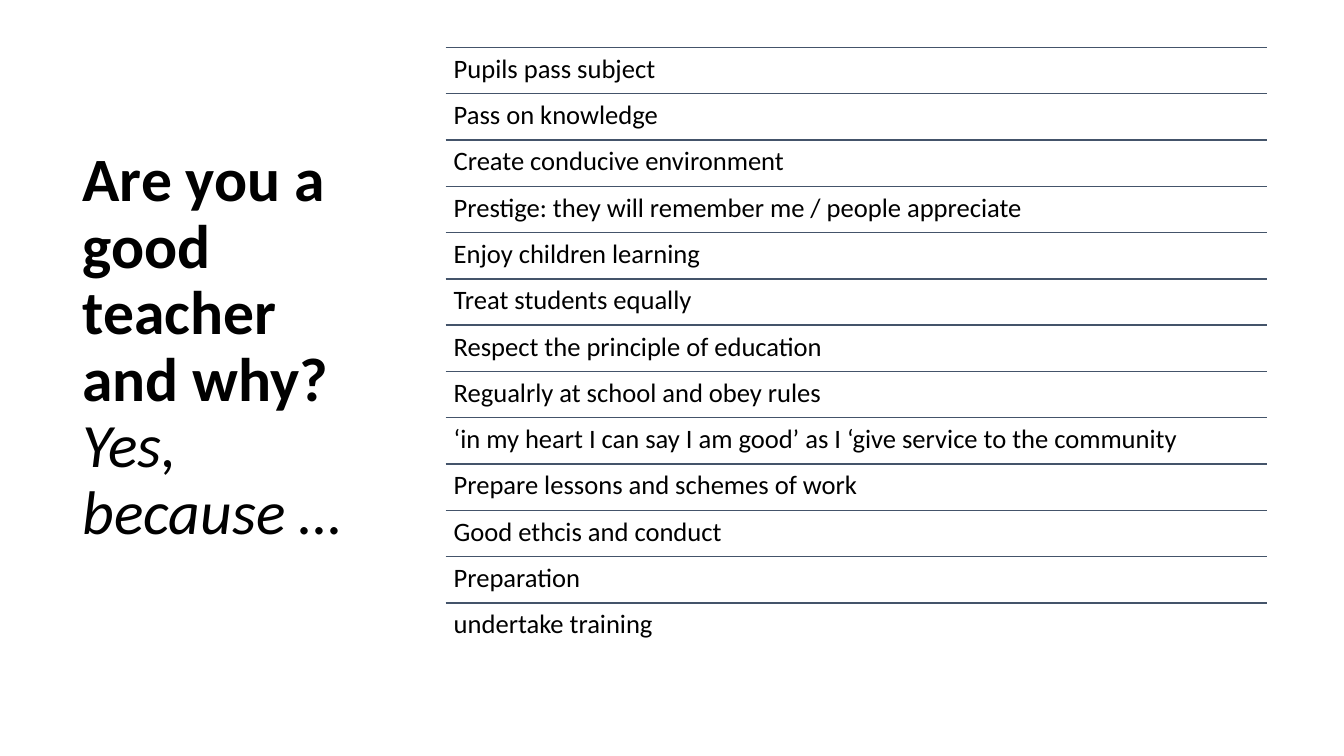
import pptx
import pptx.util
import pptx.dml.color
import pptx.enum.shapes
import pptx.enum.text
from dataclasses import dataclass
from lxml import etree

# Content
QUESTION = "Are you a good teacher and why? "
ANSWER = "Yes, because …"
REASONS = [
    "Pupils pass subject",
    "Pass on knowledge",
    "Create conducive environment",
    "Prestige: they will remember me / people appreciate",
    "Enjoy children learning",
    "Treat students equally",
    "Respect the principle of education",
    "Regualrly at school and obey rules",
    "‘in my heart I can say I am good’ as I ‘give service to the community",
    "Prepare lessons and schemes of work",
    "Good ethcis and conduct",
    "Preparation",
    "undertake training",
]


@dataclass(frozen=True)
class Theme:
    font: str = "Calibri"
    ink: str = "000000"
    rule: str = "44546A"
    question_size: int = 44
    reason_size: int = 19
    rule_width: int = 1
    line_spacing: float = 0.9


THEME = Theme()
Inches = pptx.util.Inches
Pt = pptx.util.Pt
colour = pptx.dml.color.RGBColor.from_string

# Layout: two columns sharing one top and height
WIDTH, HEIGHT = 13.33, 7.5
TOP, BODY_HEIGHT = 0.47, 5.97
QUESTION_LEFT, QUESTION_WIDTH = 0.72, 3.1
REASONS_LEFT, REASONS_WIDTH = 4.42, 8.15
ROW_HEIGHT = BODY_HEIGHT / len(REASONS)
REASON_INSET = 0.08

deck = pptx.Presentation()
deck.slide_width, deck.slide_height = Inches(WIDTH), Inches(HEIGHT)
slide = deck.slides.add_slide(deck.slide_layouts[6])


def add_text(left, top, width, height, size):
    """Return the frame and first paragraph of a wrapped text box."""
    box = slide.shapes.add_textbox(*map(Inches, (left, top, width, height)))
    frame = box.text_frame
    frame.word_wrap = True
    paragraph = frame.paragraphs[0]
    paragraph.line_spacing = THEME.line_spacing
    paragraph.font.name = THEME.font
    paragraph.font.size = Pt(size)
    paragraph.font.color.rgb = colour(THEME.ink)
    return frame, paragraph


def add_rule(top):
    rule = slide.shapes.add_connector(
        pptx.enum.shapes.MSO_CONNECTOR.STRAIGHT,
        Inches(REASONS_LEFT), Inches(top),
        Inches(REASONS_LEFT + REASONS_WIDTH), Inches(top))
    rule.line.color.rgb = colour(THEME.rule)
    rule.line.width = Pt(THEME.rule_width)
    etree.SubElement(rule._element.spPr, pptx.oxml.ns.qn("a:effectLst"))


# Question on the left
frame, heading = add_text(QUESTION_LEFT, TOP, QUESTION_WIDTH, BODY_HEIGHT,
                          THEME.question_size)
frame.vertical_anchor = pptx.enum.text.MSO_ANCHOR.MIDDLE
question = heading.add_run()
question.text, question.font.bold = QUESTION, True
answer = heading.add_run()
answer.text, answer.font.italic = ANSWER, True

# Ruled list of reasons on the right
for row, reason in enumerate(REASONS):
    top = TOP + row * ROW_HEIGHT
    add_rule(top)
    frame, line = add_text(REASONS_LEFT, top, REASONS_WIDTH, ROW_HEIGHT,
                           THEME.reason_size)
    frame.margin_left = frame.margin_right = Inches(REASON_INSET)
    frame.margin_top = frame.margin_bottom = Inches(REASON_INSET)
    line.add_run().text = reason

deck.save("out.pptx")
